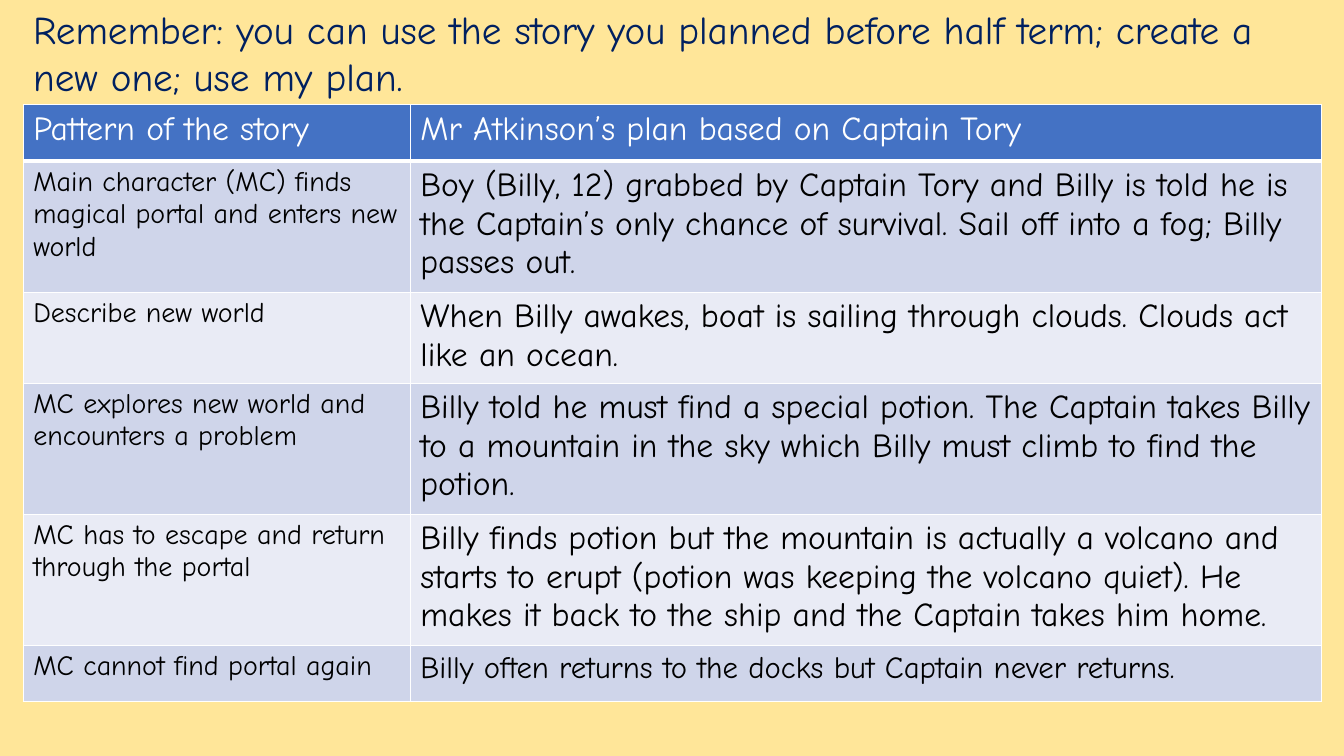
from lxml import etree
from pptx import Presentation
from pptx.dml.color import RGBColor
from pptx.enum.text import MSO_AUTO_SIZE
from pptx.oxml.ns import qn
from pptx.util import Inches, Pt

FIT_SHAPE = MSO_AUTO_SIZE.SHAPE_TO_FIT_TEXT
FONT = "Comic Neue"
BACKGROUND, NAVY, WHITE, BLACK = "FFE699", "002060", "FFFFFF", "000000"
HEADER_FILL, BAND_FILLS = "4472C4", ("CFD5EA", "E9EBF5")
COLUMN_WIDTHS = (3.84, 9.04)
ROW_HEIGHTS = (0.56, 1.3, 0.9, 1.3, 1.3, 0.56)

REMINDER = ("Remember: you can use the story you planned before half term; "
            "create a new one; use my plan.")
# Left text, right text, left size, right size
PLAN = (
    ("Pattern of the story", "Mr Atkinson’s plan based on Captain Tory", 24, 24),
    ("Main character (MC) finds magical portal and enters new world",
     "Boy (Billy, 12) grabbed by Captain Tory and Billy is told he is the "
     "Captain’s only chance of survival. Sail off into a fog; Billy passes out.", 20, 24),
    ("Describe new world",
     "When Billy awakes, boat is sailing through clouds. Clouds act like an ocean.", 20, 24),
    ("MC explores new world and encounters a problem",
     "Billy told he must find a special potion. The Captain takes Billy to a "
     "mountain in the sky which Billy must climb to find the potion.", 20, 24),
    ("MC has to escape and return through the portal",
     "Billy finds potion but the mountain is actually a volcano and starts to "
     "erupt (potion was keeping the volcano quiet). He makes it back to the ship "
     "and the Captain takes him home.", 20, 24),
    ("MC cannot find portal again",
     "Billy often returns to the docks but Captain never returns.", 20, 22),
)


def paint(fill, color):
    fill.solid()
    fill.fore_color.rgb = RGBColor.from_string(color)


def write(frame, text, size, color):
    span = frame.paragraphs[0].add_run()
    span.text = text
    span.font.name = FONT
    span.font.size = Pt(size)
    span.font.bold = False
    span.font.color.rgb = RGBColor.from_string(color)


def add_borders(cell, bottom_width):
    """Draw white cell borders; call before filling the cell."""
    properties = cell._tc.get_or_add_tcPr()
    for side, width in (("L", 1), ("R", 1), ("T", 1), ("B", bottom_width)):
        line = etree.SubElement(properties, qn(f"a:ln{side}"), w=str(Pt(width)))
        solid = etree.SubElement(line, qn("a:solidFill"))
        etree.SubElement(solid, qn("a:srgbClr"), val=WHITE)


def add_reminder(page, left, top, width, height):
    box = page.shapes.add_textbox(Inches(left), Inches(top), Inches(width), Inches(height))
    box.text_frame.word_wrap = True
    box.text_frame.auto_size = FIT_SHAPE
    write(box.text_frame, REMINDER, 28, NAVY)


def add_plan(page, left, top, width, height):
    table = page.shapes.add_table(len(PLAN), len(COLUMN_WIDTHS), Inches(left), Inches(top),
                                  Inches(width), Inches(height)).table
    for column, share in zip(table.columns, COLUMN_WIDTHS):
        column.width = Inches(width * share / sum(COLUMN_WIDTHS))
    for row, share in zip(table.rows, ROW_HEIGHTS):
        row.height = Inches(height * share / sum(ROW_HEIGHTS))
    for index, (stage, idea, stage_size, idea_size) in enumerate(PLAN):
        is_header = index == 0
        fill = HEADER_FILL if is_header else BAND_FILLS[(index - 1) % 2]
        for column, (text, size) in enumerate(((stage, stage_size), (idea, idea_size))):
            cell = table.cell(index, column)
            add_borders(cell, 3 if is_header else 1)
            paint(cell.fill, fill)
            write(cell.text_frame, text, size, WHITE if is_header else BLACK)


def main():
    deck = Presentation()
    deck.slide_width, deck.slide_height = Inches(13.33), Inches(7.5)
    page = deck.slides.add_slide(deck.slide_layouts[6])
    paint(page.background.fill, BACKGROUND)
    left, width, split = 0.23, 12.88, 1.04
    add_reminder(page, left, 0, width, split)
    add_plan(page, left, split, width, sum(ROW_HEIGHTS))
    deck.save("out.pptx")


if __name__ == "__main__":
    main()
